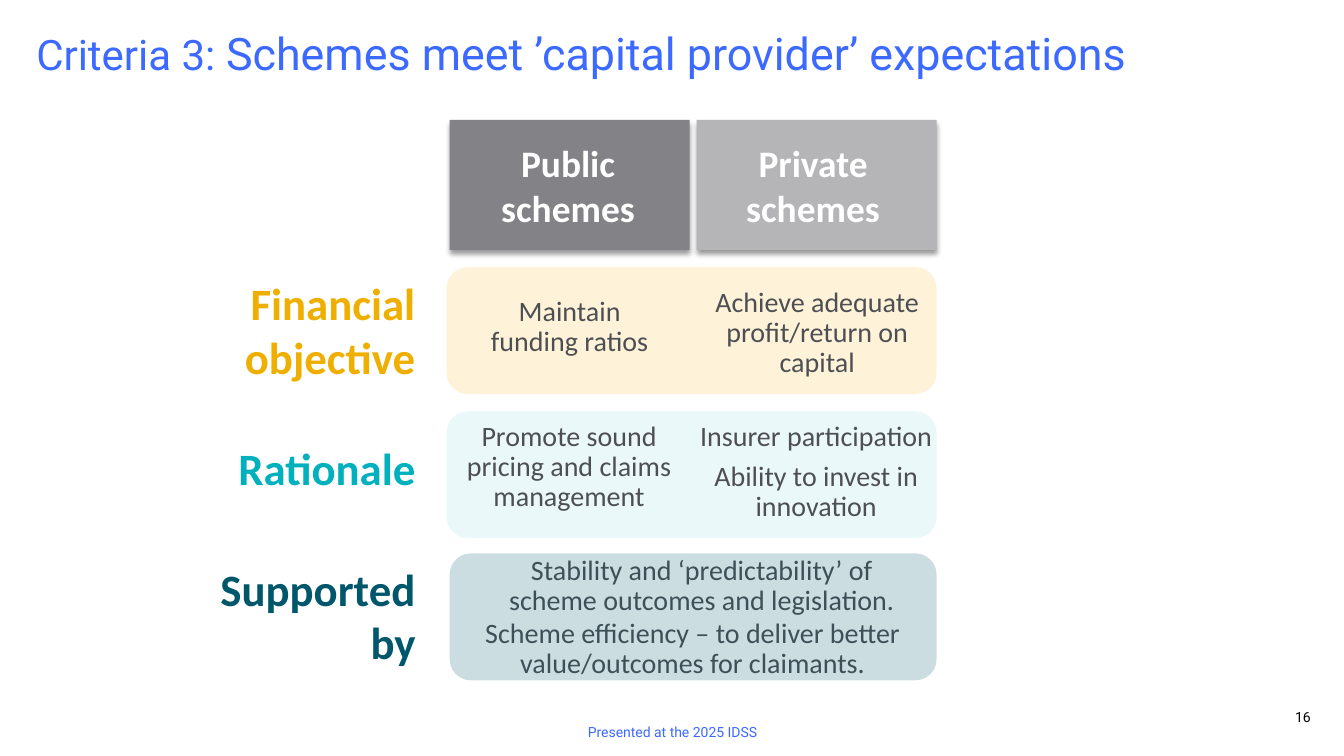
from lxml.etree import SubElement
from pptx import Presentation
from pptx.dml.color import RGBColor
from pptx.enum.shapes import MSO_SHAPE as Shape
from pptx.enum.text import MSO_ANCHOR as Anchor, MSO_AUTO_SIZE as AutoSize, PP_ALIGN as Align
from pptx.oxml.ns import qn
from pptx.util import Inches, Pt

BLUE = RGBColor(0x3C, 0x69, 0xFF)
BLACK = RGBColor(0x00, 0x00, 0x00)
WHITE = RGBColor(0xFF, 0xFF, 0xFF)
BODY_GREY = RGBColor(0x4D, 0x4F, 0x53)
DARK_GREY = RGBColor(0x83, 0x82, 0x86)
LIGHT_GREY = RGBColor(0xB5, 0xB5, 0xB7)
GOLD = RGBColor(0xEE, 0xAF, 0x00)
AMBER = RGBColor(0xFA, 0xC1, 0x45)
TEAL = RGBColor(0x00, 0xB0, 0xBD)
PALE_TEAL = RGBColor(0x99, 0xDF, 0xE5)
PETROL = RGBColor(0x00, 0x57, 0x6B)

NO_INSETS = (0, 0)
SMALL_INSETS = (0.05, 0.04)
NORMAL_INSETS = (0.1, 0.05)


class SchemeSlide:
    """Draws the elements of the scheme comparison on one slide."""

    heading_font = "Roboto"
    body_font = "Calibri"

    def __init__(self, presentation):
        self.slide = presentation.slides.add_slide(presentation.slide_layouts[6])

    def block(self, kind, box, color):
        shape = self.slide.shapes.add_shape(kind, *map(Inches, box))
        shape.shadow.inherit = False
        shape.fill.solid()
        shape.fill.fore_color.rgb = color
        shape.line.fill.background()
        return shape

    def band(self, box, color):
        shape = self.block(Shape.FLOWCHART_ALTERNATE_PROCESS, box, color)
        fill_color = shape.fill._xPr.find(qn("a:solidFill"))[0]
        SubElement(fill_color, qn("a:alpha"), val="20000")

    def header(self, box, color, label, label_box):
        shape = self.block(Shape.RECTANGLE, box, color)
        effects = shape._element.spPr.find(qn("a:effectLst"))
        shadow = SubElement(effects, qn("a:outerShdw"), blurRad=str(Pt(4)), dist=str(Pt(3)),
                            dir="5400000", algn="t", rotWithShape="0")
        shadow_color = SubElement(shadow, qn("a:srgbClr"), val=str(BLACK))
        SubElement(shadow_color, qn("a:alpha"), val="40000")
        self.text(label_box, [label], 26.7, WHITE, bold=True)

    def frame(self, box, insets=NORMAL_INSETS, anchor=Anchor.TOP):
        frame = self.slide.shapes.add_textbox(*map(Inches, box)).text_frame
        frame.word_wrap = True
        frame.vertical_anchor = anchor
        frame.margin_left = frame.margin_right = Inches(insets[0])
        frame.margin_top = frame.margin_bottom = Inches(insets[1])
        if insets == NORMAL_INSETS:
            frame.auto_size = AutoSize.SHAPE_TO_FIT_TEXT
        return frame

    def text(self, box, lines, size, color, align=Align.CENTER, bold=False, font=body_font,
             insets=NORMAL_INSETS, anchor=Anchor.TOP):
        frame = self.frame(box, insets, anchor)
        frame.text = "\n".join(lines)
        for paragraph in frame.paragraphs:
            paragraph.alignment = align
            paragraph.font.name = font
            paragraph.font.size = Pt(size)
            paragraph.font.bold = bold
            paragraph.font.color.rgb = color
        return frame

    def title(self, box, parts):
        paragraph = self.frame(box, NO_INSETS).paragraphs[0]
        paragraph.line_spacing = 0.9
        paragraph.font.name = self.heading_font
        paragraph.font.color.rgb = BLUE
        for words, size in parts:
            run = paragraph.add_run()
            run.text = words
            run.font.size = Pt(size)

    def row_label(self, box, label, color):
        self.text(box, [label], 32, color, Align.RIGHT, bold=True)

    def body(self, box, lines, insets=NORMAL_INSETS, anchor=Anchor.TOP):
        frame = self.text(box, lines, 20, BODY_GREY, insets=insets, anchor=anchor)
        for paragraph in frame.paragraphs:
            paragraph.line_spacing = 0.9
            paragraph.space_after = Pt(7)

    def footer(self, box, words, color, align):
        self.text(box, [words], 10, color, align, font=self.heading_font,
                  insets=NO_INSETS, anchor=Anchor.BOTTOM)


def main():
    presentation = Presentation()
    presentation.slide_width = Inches(13.33)
    presentation.slide_height = Inches(7.5)
    page = SchemeSlide(presentation)

    page.band((4.43, 4.08, 4.86, 1.26), PALE_TEAL)
    page.band((4.43, 2.65, 4.86, 1.26), AMBER)
    page.title((0.36, 0.32, 11.39, 1.35),
               [("Criteria 3: ", 30), ("Schemes meet ’capital provider’ expectations", 32)])

    page.header((4.46, 1.19, 2.38, 1.29), DARK_GREY, "Public schemes", (4.46, 1.34, 2.35, 1))
    page.header((6.91, 1.19, 2.38, 1.29), LIGHT_GREY, "Private schemes", (6.86, 1.34, 2.41, 1))

    page.row_label((2.15, 2.69, 2.07, 1.18), "Financial objective", GOLD)
    page.row_label((1.9, 4.32, 2.32, 0.64), "Rationale", TEAL)
    page.row_label((1.9, 5.52, 2.32, 1.18), "Supported by", PETROL)

    page.body((4.72, 2.44, 1.86, 1.61), ["Maintain funding ratios"], SMALL_INSETS, Anchor.MIDDLE)
    page.body((7, 2.5, 2.21, 1.61), ["Achieve adequate profit/return on capital"],
              SMALL_INSETS, Anchor.MIDDLE)
    page.body((4.38, 4.14, 2.53, 1.01), ["Promote sound pricing and claims management"])
    page.body((6.83, 4.14, 2.53, 1.13),
              ["Insurer participation", "Ability to invest in innovation"])
    page.body((4.51, 6.09, 4.72, 0.71),
              ["Scheme efficiency – to deliver better value/outcomes for claimants."])
    page.body((4.73, 5.47, 4.46, 0.71),
              ["Stability and ‘predictability’ of scheme outcomes and legislation."])
    page.band((4.46, 5.49, 4.83, 1.26), PETROL)

    page.footer((4.42, 7.14, 4.5, 0.2), "Presented at the 2025 IDSS", BLUE, Align.CENTER)
    page.footer((12.54, 7, 0.46, 0.2), "16", BLACK, Align.RIGHT)

    presentation.save("out.pptx")


if __name__ == "__main__":
    main()
